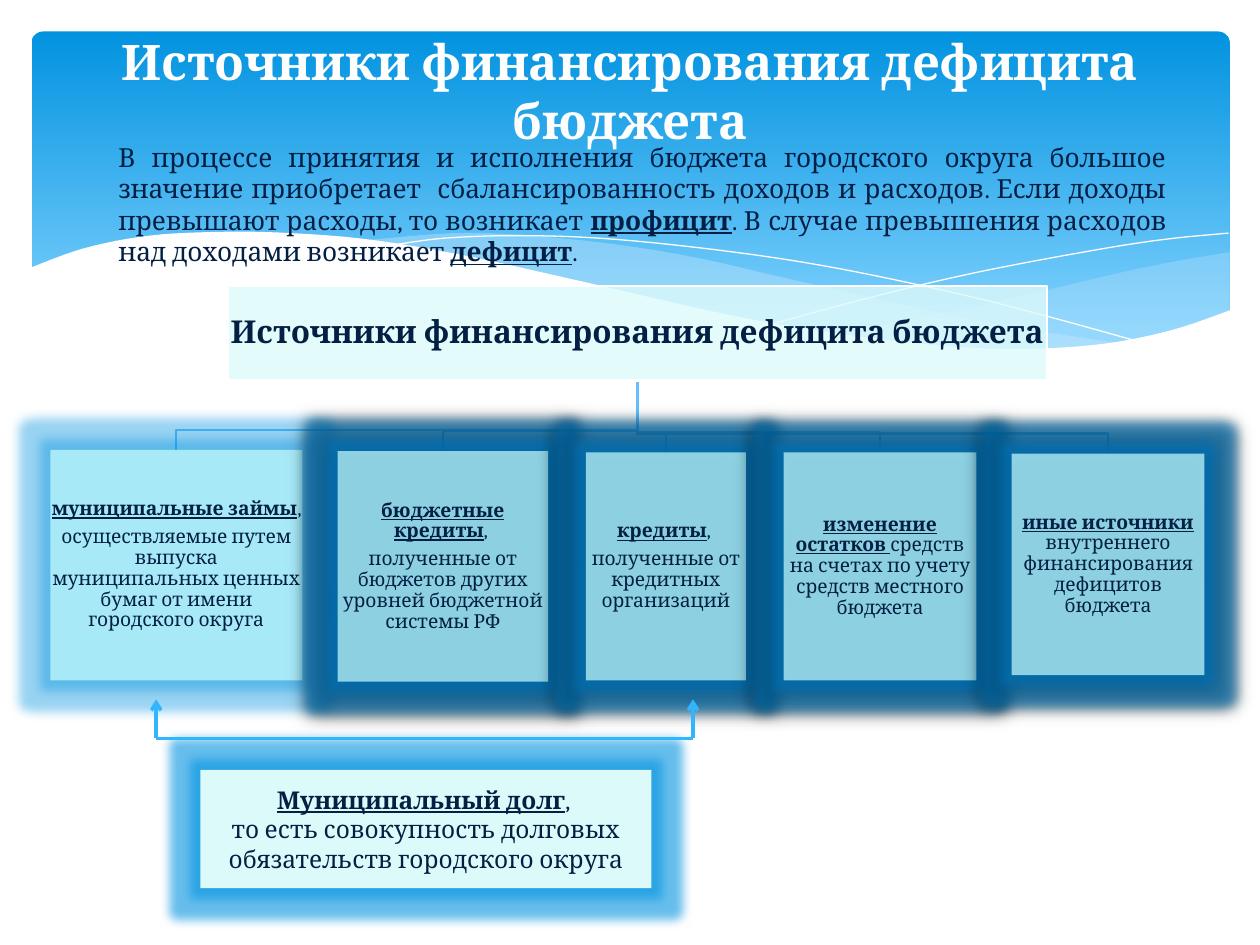
from lxml import etree
from pptx import Presentation
from pptx import util as u
from pptx.dml.color import RGBColor
from pptx.enum import shapes, text
from pptx.oxml.ns import qn

FONT, NAVY, WHITE, ICE, AQUA = "Cambria", "041F44", "FFFFFF", "DDFAFB", "C8FEFD"
SKY, DEEP = "0293E0", "0078C0"

# Content: paragraphs are lists of runs; "*" marks a bold underlined run
TITLE = "Источники финансирования дефицита бюджета"
INTRO = [["В процессе принятия и исполнения бюджета городского округа большое значение "
          "приобретает  сбалансированность доходов и расходов. Если доходы превышают "
          "расходы, то возникает ", "*профицит", ". В случае превышения расходов над "
          "доходами возникает ", "*дефицит", "."]]
DEBT = [["*Муниципальный долг", ", "],
        ["то есть совокупность долговых обязательств городского округа"]]
HEADER = (1.81, 2.27, 6.5, 0.75)
SOURCES = [  # left, top, width, height, paragraphs
    (0.4, 3.57, 2, 1.83, [["*муниципальные займы", ", "],
     ["осуществляемые путем выпуска муниципальных ценных бумаг от имени городского округа"]]),
    (2.68, 3.58, 1.67, 1.83, [["*бюджетные кредиты", ", "],
     ["полученные от бюджетов других уровней бюджетной системы РФ"]]),
    (4.65, 3.59, 1.27, 1.81, [["*кредиты", ", "], ["полученные от кредитных организаций"]]),
    (6.22, 3.59, 1.53, 1.81, [["*изменение остатков ",
     "средств на счетах по учету средств местного бюджета"]]),
    (8.03, 3.6, 1.53, 1.76, [["*иные источники", " внутреннего финансирования дефицитов бюджета"]]),
]

# Banner waves: knots of smooth curves
RIGHT_WAVE = [
    [(9.76, 2), (9.35, 2.07), (8.91, 2.16), (8.32, 2.3), (7.53, 2.48), (6.61, 2.65)],
    [(6.61, 2.65), (7.05, 2.71), (7.57, 2.76), (8.14, 2.78), (8.63, 2.75), (9.05, 2.69),
     (9.42, 2.59), (9.76, 2.47)]]
MIDDLE_WAVE = [
    [(8.93, 2.73), (8.07, 2.6), (7.41, 2.47), (6.29, 2.22), (5.55, 2.05), (4.89, 1.94),
     (4.2, 1.87), (3.61, 1.85), (2.86, 1.91)],
    [(2.86, 1.91), (3.62, 2.03), (4.49, 2.22), (5.3, 2.4), (6.01, 2.55), (6.8, 2.68),
     (7.48, 2.76), (8.18, 2.78), (8.93, 2.73)]]
WHITE_WAVE = [
    [(9.77, 2.46), (9.3, 2.62), (8.75, 2.73), (8.09, 2.77), (7.44, 2.74), (6.68, 2.65),
     (5.79, 2.5), (4.47, 2.2), (3.65, 2.02), (2.92, 1.9), (2.3, 1.85), (1.77, 1.84),
     (1.19, 1.87), (0.67, 1.97), (0.23, 2.13)],
    [(0.23, 3.29), (9.77, 3.29)]]
THIN_LINES = [
    [(3.09, 1.95), (3.53, 1.89), (4.16, 1.87), (4.89, 1.9), (5.82, 2), (6.65, 2.13),
     (7.6, 2.33), (8.31, 2.51), (9.07, 2.72)],
    [(6.13, 2.57), (6.95, 2.35), (7.76, 2.16), (8.66, 1.99), (9.24, 1.9), (9.75, 1.85)]]


def rgb(color):
    return RGBColor.from_string(color)


def smooth(knots, steps=6):
    """Catmull-Rom curve through the knots."""
    if len(knots) < 3:
        return knots
    ends = [knots[0], *knots, knots[-1]]
    points = []
    for a, b, c, d in zip(ends, ends[1:], ends[2:], ends[3:]):
        for t in (step / steps for step in range(steps)):
            points.append(tuple(
                (2 * q + (r - p) * t + (2 * p - 5 * q + 4 * r - s) * t**2
                 + (3 * q - p - 3 * r + s) * t**3) / 2 for p, q, r, s in zip(a, b, c, d)))
    return points + [knots[-1]]


def paint(shape, fill=None, opacity=100, line=None, width=1.25):
    shape.shadow.inherit = False
    if fill:
        shape.fill.solid()
        shape.fill.fore_color.rgb = rgb(fill)
        if opacity < 100:
            color = shape.fill._xPr.find(qn("a:solidFill"))[0]
            etree.SubElement(color, qn("a:alpha"), val=str(opacity * 1000))
    else:
        shape.fill.background()
    if line:
        shape.line.color.rgb = rgb(line)
        shape.line.width = u.Pt(width)
    else:
        shape.line.fill.background()


def add_effect(shape, kind, color, opacity, **settings):
    effects = shape._element.spPr.find(qn("a:effectLst"))
    effect = etree.SubElement(effects, qn("a:" + kind), settings)
    tint = etree.SubElement(effect, qn("a:srgbClr"), val=color)
    etree.SubElement(tint, qn("a:alpha"), val=str(opacity * 1000))


def add_glow(shape, color, opacity):
    add_effect(shape, "glow", color, opacity, rad=str(u.Pt(12)))


def add_path(points, closed=False, **look):
    points = [(u.Inches(x), u.Inches(y)) for x, y in points]
    builder = page.shapes.build_freeform(*points[0])
    builder.add_line_segments(points[1:], close=closed)
    paint(builder.convert_to_shape(), **look)


def add_box(bounds, kind=shapes.MSO_SHAPE.RECTANGLE, **look):
    box = page.shapes.add_shape(kind, *map(u.Inches, bounds))
    paint(box, **look)
    return box


def write(box, paragraphs, size, color=NAVY, align=text.PP_ALIGN.CENTER,
          anchor=text.MSO_ANCHOR.MIDDLE, inset=None, spacing=None, after=0):
    frame = box.text_frame
    frame.word_wrap = True
    frame.vertical_anchor = anchor
    if inset is not None:
        frame.margin_left = frame.margin_right = u.Inches(inset)
        frame.margin_top = frame.margin_bottom = u.Inches(inset)
    for number, spans in enumerate(paragraphs):
        para = frame.add_paragraph() if number else frame.paragraphs[0]
        para.alignment = align
        para.line_spacing = spacing
        para.space_after = u.Pt(after)
        para.font.name, para.font.size = FONT, u.Pt(size)
        para.font.color.rgb = rgb(color)
        for words in spans:
            span = para.add_run()
            span.text = words.lstrip("*")
            if words.startswith("*"):
                span.font.bold = span.font.underline = True
    return frame


def add_line(start, end, arrow=False):
    line = page.shapes.add_connector(shapes.MSO_CONNECTOR.STRAIGHT,
                                     *map(u.Inches, (*start, *end)))
    line.line.color.rgb = rgb("31B6FD")
    line.line.width = u.Pt(2)
    if arrow:
        etree.SubElement(line.line._get_or_add_ln(), qn("a:tailEnd"), type="arrow")
    etree.SubElement(line._element.spPr, qn("a:effectLst"))


deck = Presentation()
deck.slide_width, deck.slide_height = u.Inches(10), u.Inches(7.5)
page = deck.slides.add_slide(deck.slide_layouts[6])

# Banner
banner = add_box((0.25, 0.25, 9.51, 2.7), shapes.MSO_SHAPE.ROUNDED_RECTANGLE)
banner.adjustments[0] = 0.034
banner.fill.gradient()
banner.fill.gradient_angle = 270
for stop, (position, color) in zip(banner.fill.gradient_stops, [(0, SKY), (0.9, "83D3FE")]):
    stop.position, stop.color.rgb = position, rgb(color)
for wave, opacity in ((RIGHT_WAVE, 29), (MIDDLE_WAVE, 40)):
    add_path([point for knots in wave for point in smooth(knots)], True,
             fill="C6E7FC", opacity=opacity)
for knots in THIN_LINES:
    add_path(smooth(knots), line=WHITE, width=0)
add_path([point for knots in WHITE_WAVE for point in smooth(knots)], True, fill=WHITE)

# Tree branches from the header to each source
left, top, width, height = HEADER
trunk, base = left + width / 2, top + height
for left, top, width, *_ in reversed(SOURCES):
    middle, bend = left + width / 2, top - 0.16
    add_path([(trunk, base), (trunk, bend), (middle, bend), (middle, top)], line="66BFFD")

# Header and source boxes
header = add_box(HEADER, fill=ICE, opacity=80, line=WHITE)
write(header, [[TITLE]], 18, inset=0.01, spacing=0.9).paragraphs[0].font.bold = True
for number, (*bounds, paragraphs) in enumerate(SOURCES):
    box = add_box(bounds, fill=AQUA, opacity=70)
    if number:
        add_glow(box, DEEP, 60)
        add_effect(box, "outerShdw", "000000", 100, blurRad=str(u.Pt(8.5)),
                   dist=str(u.Pt(1)), dir="5400000", rotWithShape="0")
    else:
        add_glow(box, SKY, 40)
    write(box, paragraphs, 11, inset=0.01, spacing=0.9, after=4)

# Title and introduction
title = page.shapes.add_textbox(*map(u.Inches, (0.5, 0.37, 9, 0.7)))
write(title, [[TITLE]], 28, WHITE).paragraphs[0].font.bold = True
intro = page.shapes.add_textbox(*map(u.Inches, (0.84, 1.07, 8.52, 0.86)))
write(intro, INTRO, 15, align=text.PP_ALIGN.JUSTIFY, anchor=text.MSO_ANCHOR.TOP)

# Municipal debt box and its bracket
debt = add_box((1.59, 6.11, 3.58, 0.94), fill=ICE)
add_glow(debt, SKY, 60)
write(debt, DEBT, 14)
bracket_left, bracket_right, bracket_y = 1.24, 5.5, 5.86
add_line((bracket_left, bracket_y), (bracket_right, bracket_y))
for x in (bracket_left, bracket_right):
    add_line((x, bracket_y), (x, bracket_y - 0.31), arrow=True)

deck.save("out.pptx")
